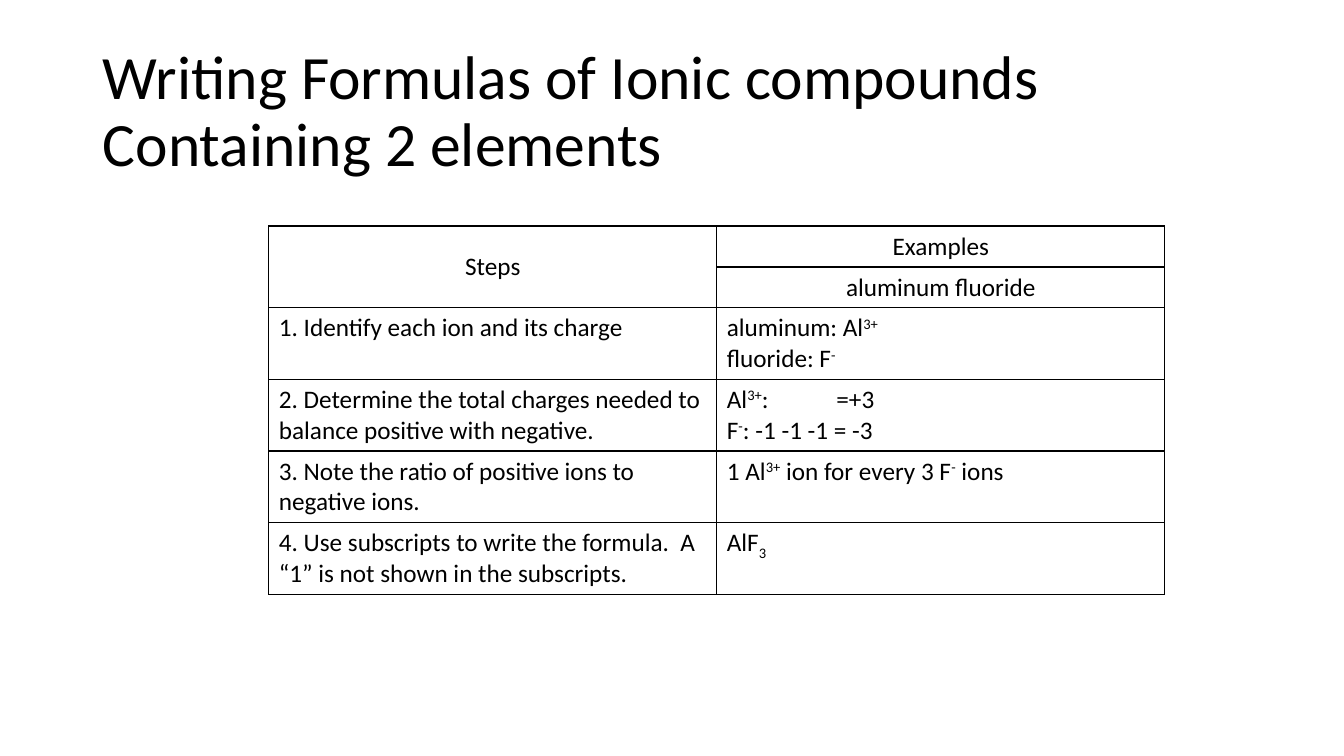
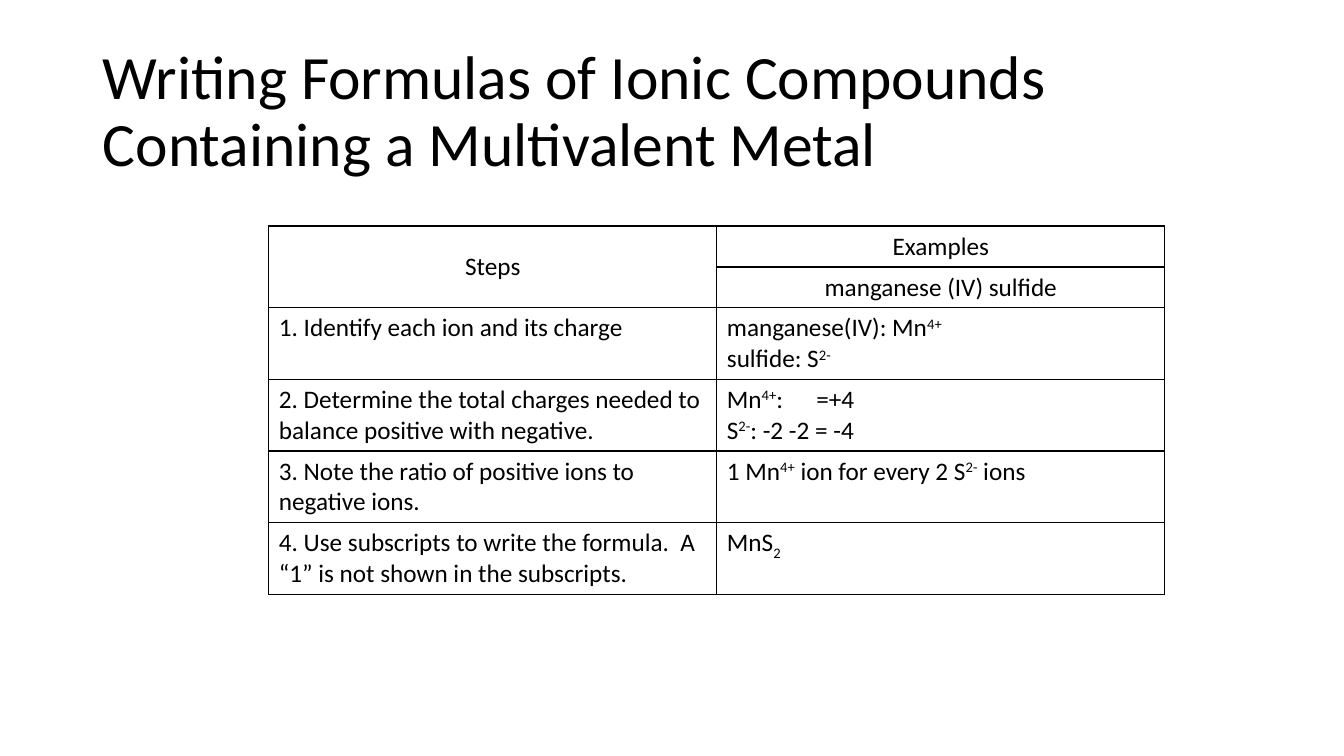
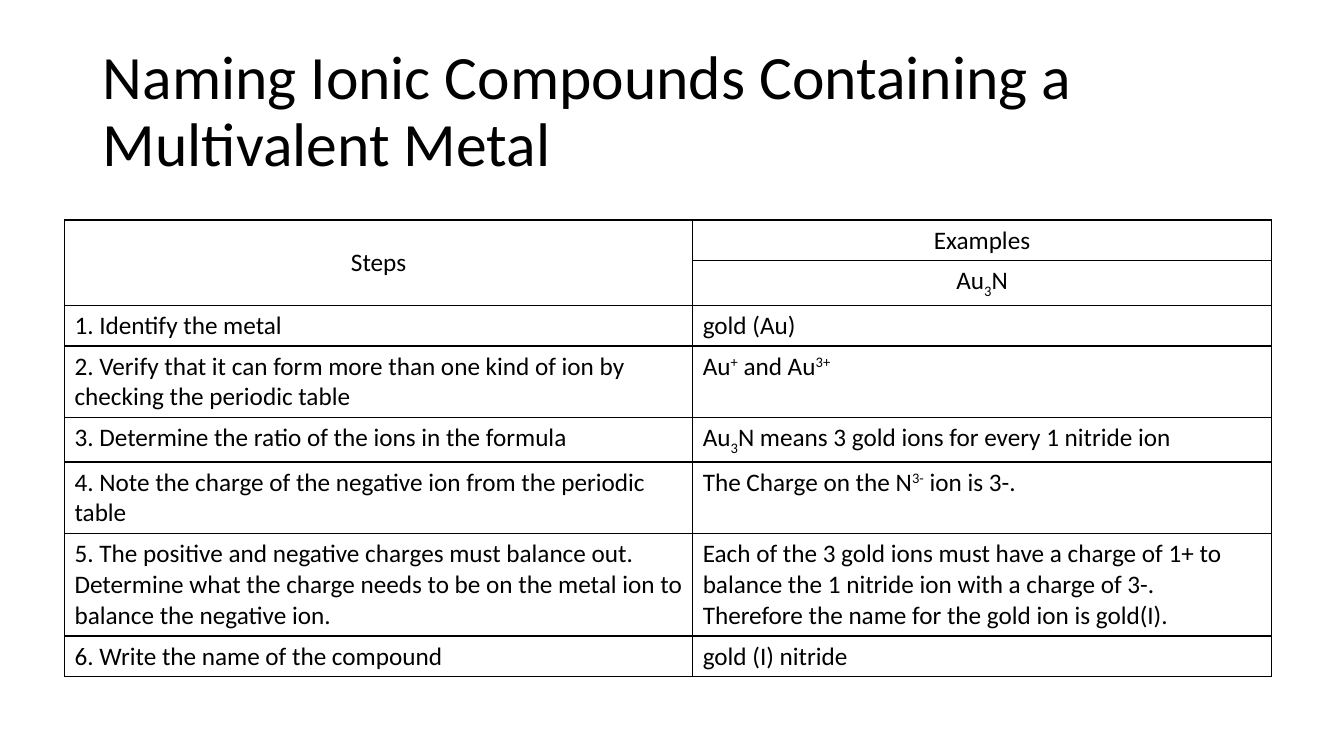
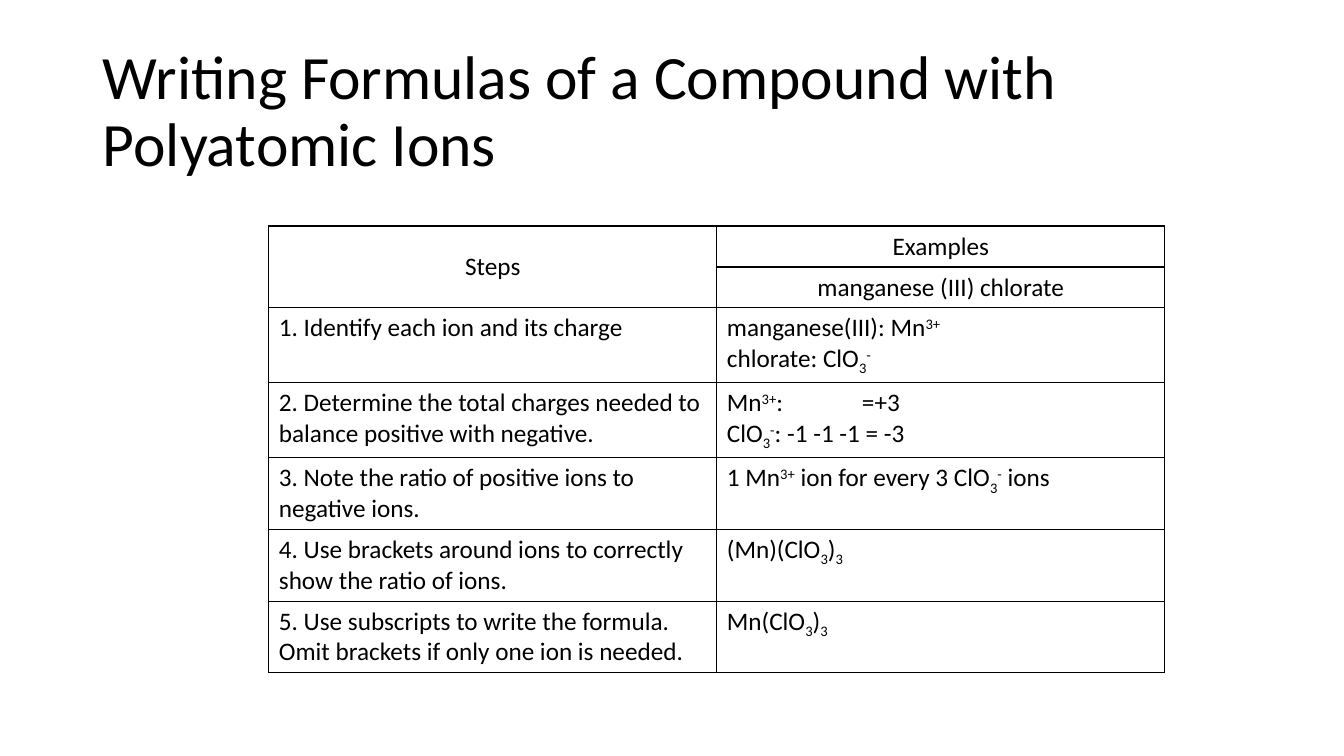
from dataclasses import dataclass

from lxml.etree import SubElement as Sub
from pptx import Presentation
from pptx.dml.color import RGBColor as Rgb
from pptx.enum.text import MSO_ANCHOR as Anchor, MSO_AUTO_SIZE as Fit, PP_ALIGN as Align
from pptx.oxml.ns import qn
from pptx.util import Inches, Pt

WIDE, HIGH = Inches(13.33), Inches(7.5)
FONT = "Calibri"
COLOR = {"ink": "000000", "paper": "FFFFFF"}
SHIFT = {"^": "30000", "_": "-25000"}
LINE = Pt(1)
ROW = 5.4


@dataclass(frozen=True)
class Box:
    x: float
    y: float
    w: float
    h: float

    def rect(self) -> tuple[int, int, int, int]:
        return across(self.x), down(self.y), across(self.w), down(self.h)


@dataclass(frozen=True)
class Step:
    task: str
    case: str


@dataclass(frozen=True)
class Sheet:
    title: str
    topic: str
    steps: list[Step]
    box: Box
    split: float = 50
    tab: float = 0


def across(part: float) -> int:
    return int(WIDE * part / 100)


def down(part: float) -> int:
    return int(HIGH * part / 100)


HEAD = Box(6.9, 5.3, 86.25, 19.35)
SMALL = Box(20, 29.9, 66.67, 48.1)
TALL = Box(20, 29.9, 66.67, 57.5)
BROAD = Box(4.8, 29.1, 89.8, 59.1)

IONS = "1. Identify each ion and its charge"
TOTAL = "2. Determine the total charges needed to balance positive with negative."
RATIO = "3. Note the ratio of positive ions to negative ions."
WRITE = "4. Use subscripts to write the formula.  A “1” is not shown in the subscripts."

SHEETS = [
    Sheet(
        "Writing Formulas of Ionic compounds Containing 2 elements",
        "aluminum fluoride",
        [
            Step(IONS, "aluminum: Al{^3+}\nfluoride: F{^-}"),
            Step(TOTAL, "Al{^3+}:\t=+3\nF{^-}: -1 -1 -1 = -3"),
            Step(RATIO, "1 Al{^3+} ion for every 3 F{^-} ions"),
            Step(WRITE, "AlF{_3}"),
        ],
        SMALL,
        tab=8.15,
    ),
    Sheet(
        "Writing Formulas of Ionic Compounds Containing a Multivalent Metal",
        "manganese (IV) sulfide",
        [
            Step(IONS, "manganese(IV): Mn{^4+}\nsulfide: S{^2-}"),
            Step(TOTAL, "Mn{^4+}:\t=+4\nS{^2-}: -2 -2 = -4"),
            Step(RATIO, "1 Mn{^4+} ion for every 2 S{^2-} ions"),
            Step(WRITE, "MnS{_2}"),
        ],
        SMALL,
        tab=6.65,
    ),
    Sheet(
        "Naming Ionic Compounds Containing a Multivalent Metal",
        "Au{_3}N",
        [
            Step("1. Identify the metal", "gold (Au)"),
            Step(
                "2. Verify that it can form more than one kind of ion by checking the periodic table",
                "Au{^+} and Au{^3+}",
            ),
            Step(
                "3. Determine the ratio of the ions in the formula",
                "Au{_3}N means 3 gold ions for every 1 nitride ion",
            ),
            Step(
                "4. Note the charge of the negative ion from the periodic table",
                "The Charge on the N{^3-} ion is 3-.",
            ),
            Step(
                "5. The positive and negative charges must balance out.  Determine what "
                "the charge needs to be on the metal ion to balance the negative ion.",
                "Each of the 3 gold ions must have a charge of 1+ to balance the 1 nitride "
                "ion with a charge of 3-.  Therefore the name for the gold ion is gold(I).",
            ),
            Step("6. Write the name of the compound", "gold (I) nitride"),
        ],
        BROAD,
        split=52.05,
    ),
    Sheet(
        "Writing Formulas of a Compound with Polyatomic Ions",
        "manganese (III) chlorate",
        [
            Step(IONS, "manganese(III): Mn{^3+}\nchlorate: ClO{_3}{^-}"),
            Step(TOTAL, "Mn{^3+}:\t=+3\nClO{_3}{^-}: -1 -1 -1 = -3"),
            Step(RATIO, "1 Mn{^3+} ion for every 3 ClO{_3}{^-} ions"),
            Step(
                "4. Use brackets around ions to correctly show the ratio of ions.",
                "(Mn)(ClO{_3}){_3}",
            ),
            Step(
                "5. Use subscripts to write the formula.  Omit brackets if only one ion is needed.",
                "Mn(ClO{_3}){_3}",
            ),
        ],
        TALL,
        tab=10.05,
    ),
]


def style(run, size: float) -> None:
    run.font.name = FONT
    run.font.size = Pt(size)
    run.font.color.rgb = Rgb.from_string(COLOR["ink"])


def add_title(slide, text: str) -> None:
    shape = slide.shapes.title
    shape.left, shape.top, shape.width, shape.height = HEAD.rect()
    frame = shape.text_frame
    frame.text = text
    frame.word_wrap = True
    frame.auto_size = Fit.NONE
    frame.vertical_anchor = Anchor.MIDDLE
    para = frame.paragraphs[0]
    para.alignment = Align.LEFT
    para.line_spacing = 0.9
    style(para.runs[0], 44)


def add_runs(para, text: str) -> None:
    for part in filter(None, text.replace("}", "{").split("{")):
        run = para.add_run()
        base = SHIFT.get(part[0])
        run.text = part[1:] if base else part
        style(run, 18)
        if base:
            run.font._element.set("baseline", base)


def add_tab(para, pos: int) -> None:
    stops = Sub(para._p.get_or_add_pPr(), qn("a:tabLst"))
    Sub(stops, qn("a:tab"), pos=str(pos), algn="l")


def fill_cell(cell, text: str, tab: float, head: bool) -> None:
    frame = cell.text_frame
    for i, line in enumerate(text.split("\n")):
        para = frame.add_paragraph() if i else frame.paragraphs[0]
        para.alignment = Align.CENTER if head else Align.LEFT
        if "\t" in line:
            add_tab(para, across(tab))
        add_runs(para, line)
    cell.vertical_anchor = Anchor.MIDDLE if head else Anchor.TOP


def frame_cell(cell) -> None:
    props = cell._tc.get_or_add_tcPr()
    for side in ("lnL", "lnR", "lnT", "lnB"):
        edge = Sub(props, qn(f"a:{side}"), w=str(LINE))
        Sub(Sub(edge, qn("a:solidFill")), qn("a:srgbClr"), val=COLOR["ink"])
    cell.fill.solid()
    cell.fill.fore_color.rgb = Rgb.from_string(COLOR["paper"])


def add_steps(slide, sheet: Sheet) -> None:
    rows = [("Steps", "Examples"), ("", sheet.topic)]
    rows += [(step.task, step.case) for step in sheet.steps]
    shape = slide.shapes.add_table(len(rows), 2, *sheet.box.rect())
    table = shape.table
    table.first_row = table.horz_banding = False
    for col, part in zip(table.columns, (sheet.split, 100 - sheet.split)):
        col.width = across(sheet.box.w * part / 100)
    for r, texts in enumerate(rows):
        table.rows[r].height = down(ROW)
        for c, text in enumerate(texts):
            cell = table.cell(r, c)
            frame_cell(cell)
            fill_cell(cell, text, sheet.tab, r < 2)
    table.cell(0, 0).merge(table.cell(1, 0))
    shape.height = down(sheet.box.h)


def main() -> None:
    deck = Presentation()
    deck.slide_width, deck.slide_height = WIDE, HIGH
    for sheet in SHEETS:
        slide = deck.slides.add_slide(deck.slide_layouts[5])
        add_title(slide, sheet.title)
        add_steps(slide, sheet)
    deck.save("out.pptx")


if __name__ == "__main__":
    main()
